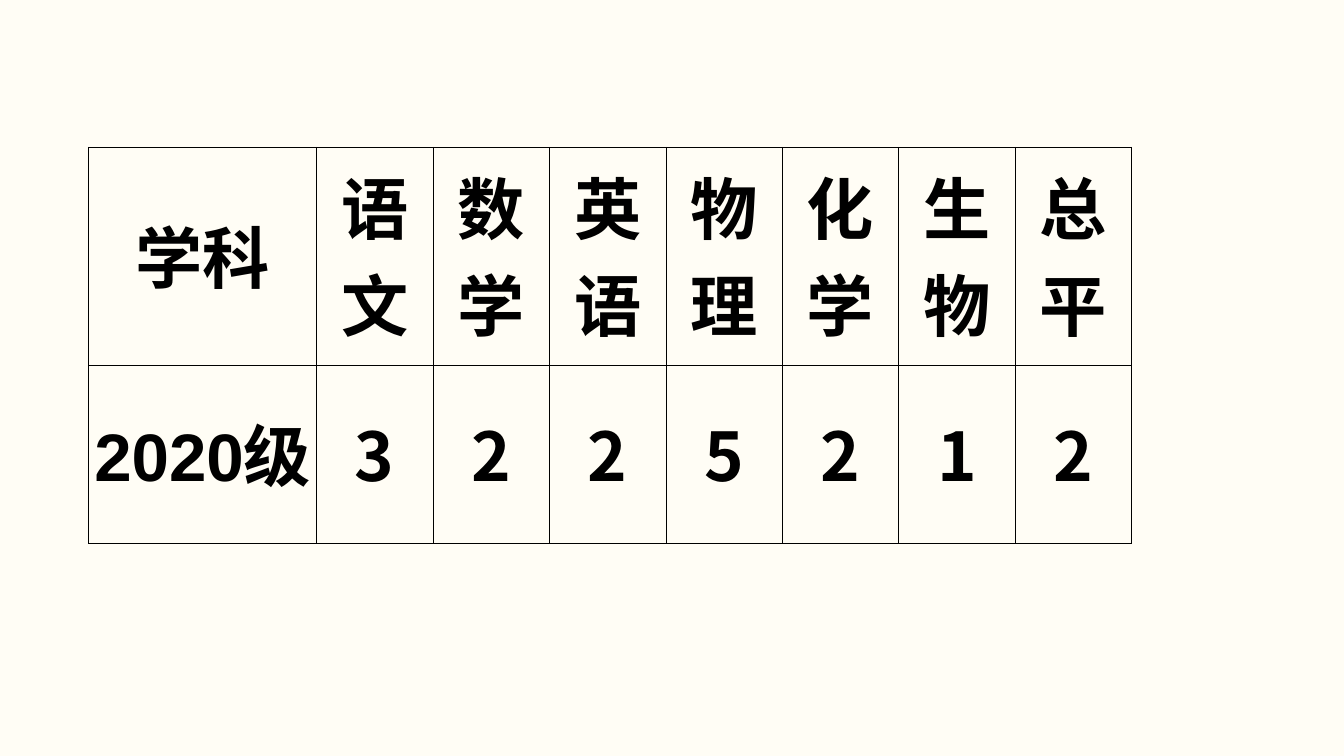
from pptx import Presentation
from pptx.dml.color import RGBColor
from pptx.enum.text import MSO_ANCHOR, PP_ALIGN
from pptx.oxml.ns import qn
from pptx.util import Inches, Pt
from lxml.etree import SubElement

SUBJECTS = ["学科", "语文", "数学", "英语", "物理", "化学", "生物", "总平"]
SCORES = ["2020级", "3", "2", "2", "5", "2", "1", "2"]
ROW_HEIGHTS = [1.34, 2.16, 1.22]
LABEL_WIDTH, SCORE_WIDTH = 2.26, 1.155
LEFT, TOP = 0.88, 0.12
LATIN_FONT, CHINESE_FONT = "Arial", "Noto Sans CJK SC"
CREAM = RGBColor(0xFF, 0xFD, 0xF5)
BLACK = RGBColor(0, 0, 0)


def set_borders(cell, visible):
    properties = cell._tc.get_or_add_tcPr()
    for side in "LRTB":
        line = SubElement(properties, qn(f"a:ln{side}"), w=str(Pt(0.5)))
        if side in visible:
            fill = SubElement(line, qn("a:solidFill"))
            SubElement(fill, qn("a:srgbClr"), val=str(BLACK))
        else:
            SubElement(line, qn("a:noFill"))
    cell.fill.background()


def write_cell(cell, text):
    cell.margin_left = cell.margin_right = cell.margin_top = Inches(0.01)
    cell.margin_bottom = Inches(0.05)
    cell.vertical_anchor = MSO_ANCHOR.MIDDLE
    cell.text_frame.text = text
    para = cell.text_frame.paragraphs[0]
    para.alignment = PP_ALIGN.CENTER
    font = para.runs[0].font
    font.size, font.bold = Pt(48), True
    font.color.rgb = BLACK
    font.name = CHINESE_FONT if text.isdigit() else LATIN_FONT
    SubElement(font._element, qn("a:ea"), typeface=CHINESE_FONT)


def main():
    deck = Presentation()
    deck.slide_width, deck.slide_height = Inches(13.33), Inches(7.5)
    page = deck.slides.add_slide(deck.slide_layouts[6])
    page.background.fill.solid()
    page.background.fill.fore_color.rgb = CREAM

    widths = [LABEL_WIDTH] + [SCORE_WIDTH] * (len(SUBJECTS) - 1)
    frame = page.shapes.add_table(
        len(ROW_HEIGHTS), len(widths), Inches(LEFT), Inches(TOP),
        Inches(sum(widths)), Inches(sum(ROW_HEIGHTS)))
    table = frame.table
    table.first_row = table.horz_banding = False
    for column, width in zip(table.columns, widths):
        column.width = Inches(width)
    for row, height in zip(table.rows, ROW_HEIGHTS):
        row.height = Inches(height)

    table.cell(0, 0).merge(table.cell(0, len(widths) - 1))
    for cell in table.rows[0].cells:
        set_borders(cell, "B")
    for row_index, texts in enumerate([SUBJECTS, SCORES], start=1):
        for cell, text in zip(table.rows[row_index].cells, texts):
            write_cell(cell, text)
            set_borders(cell, "LRTB")

    deck.save("out.pptx")


if __name__ == "__main__":
    main()
